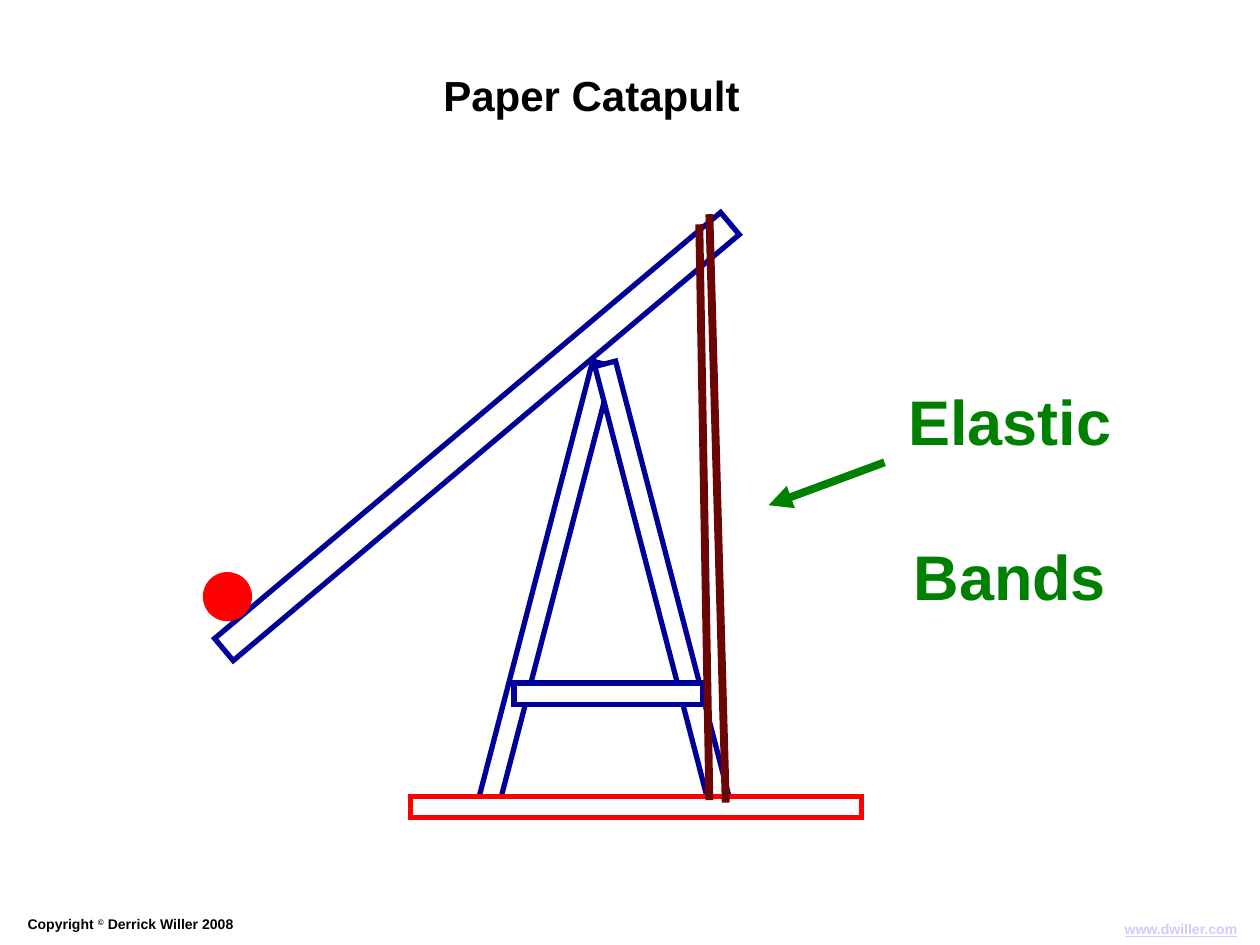
from lxml import etree
from pptx import Presentation, util as u
from pptx.dml.color import RGBColor
from pptx.enum import shapes, text
from pptx.oxml.ns import qn

PX = 9144  # 100 px to the inch
NAVY, RED, GREEN, MAROON = "000099", "FF0000", "008000", "6A0606"
LEFT, CENTER, RIGHT = (text.PP_ALIGN.LEFT, text.PP_ALIGN.CENTER,
                       text.PP_ALIGN.RIGHT)


def rgb(value):
    return RGBColor.from_string(value)


prs = Presentation()
prs.slide_width, prs.slide_height = 1000 * PX, 750 * PX
s = prs.slides.add_slide(prs.slide_layouts[6])

# Texts: box, alignment, wrap, size, space between paragraphs, paragraphs of runs
texts = [
    ((342, 50, 255, 50), LEFT, False, 24, 0, [[("Paper Catapult", "000000", {})]]),
    ((12, 722, 565, 24), LEFT, True, 8, 0,
     [[("Copyright ", "000000", {}), ("©", "000000", {"baseline": "30000"}),
       (" Derrick Willer 2008", "000000", {})]]),
    ((858, 726, 134, 24), RIGHT, True, 8, 0,
     [[("www.dwiller.com", "CCCCFF", {"u": "sng"})]]),
    ((710, 299, 183, 188), CENTER, False, 36, 45,
     [[("Elastic", GREEN, {})], [("Bands", GREEN, {})]]),
]
for box, align, wrap, size, gap, paragraphs in texts:
    tf = s.shapes.add_textbox(*(v * PX for v in box)).text_frame
    tf.word_wrap = wrap
    for i, runs in enumerate(paragraphs):
        p = tf.add_paragraph() if i else tf.paragraphs[0]
        p.alignment = align
        p.space_before = u.Pt(gap if i else 0)
        for words, color, attributes in runs:
            r = p.add_run()
            r.text = words
            for name, value in {"name": "Arial", "size": u.Pt(size), "bold": True}.items():
                setattr(r.font, name, value)
            r.font.color.rgb = rgb(color)
            for name, value in attributes.items():
                r.font._element.set(name, value)

# Frame from back to front: box, rotation, line colour
beams = [
    ((425, 283, 17, 358), 14.6, NAVY),   # left leg
    ((367, 84, 23, 525), 49.9, NAVY),    # throwing arm
    ((517, 283, 17, 358), -14.6, NAVY),  # right leg
    ((408, 542, 150, 17), 0, NAVY),      # crossbar
    ((326, 632, 358, 17), 0, RED),       # base
]
for box, rotation, color in beams:
    sp = s.shapes.add_shape(shapes.MSO_SHAPE.RECTANGLE, *(v * PX for v in box))
    sp.rotation = rotation
    sp.shadow.inherit = False
    sp.fill.solid()
    sp.fill.fore_color.rgb = rgb("FFFFFF")
    sp.line.color.rgb = rgb(color)
    sp.line.width = u.Pt(3)
    etree.SubElement(sp.line._get_or_add_ln(), qn("a:miter"), lim="800000")

ball = s.shapes.add_shape(shapes.MSO_SHAPE.OVAL, 161 * PX, 454 * PX, 39 * PX, 39 * PX)
ball.shadow.inherit = False
ball.fill.solid()
ball.fill.fore_color.rgb = rgb(RED)
ball.line.fill.background()

# Pointer and elastic bands: ends, colour, arrowhead
lines = [
    ((702, 367, 610, 401), GREEN, True),
    ((555, 178, 563, 635), MAROON, False),
    ((563, 170, 576, 637), MAROON, False),
]
for ends, color, arrow in lines:
    c = s.shapes.add_connector(shapes.MSO_CONNECTOR.STRAIGHT, *(v * PX for v in ends))
    c.line.color.rgb = rgb(color)
    c.line.width = u.Pt(4.5)
    if arrow:
        etree.SubElement(c.line._get_or_add_ln(), qn("a:tailEnd"), type="triangle")
    etree.SubElement(c._element.spPr, qn("a:effectLst"))

prs.save("out.pptx")
